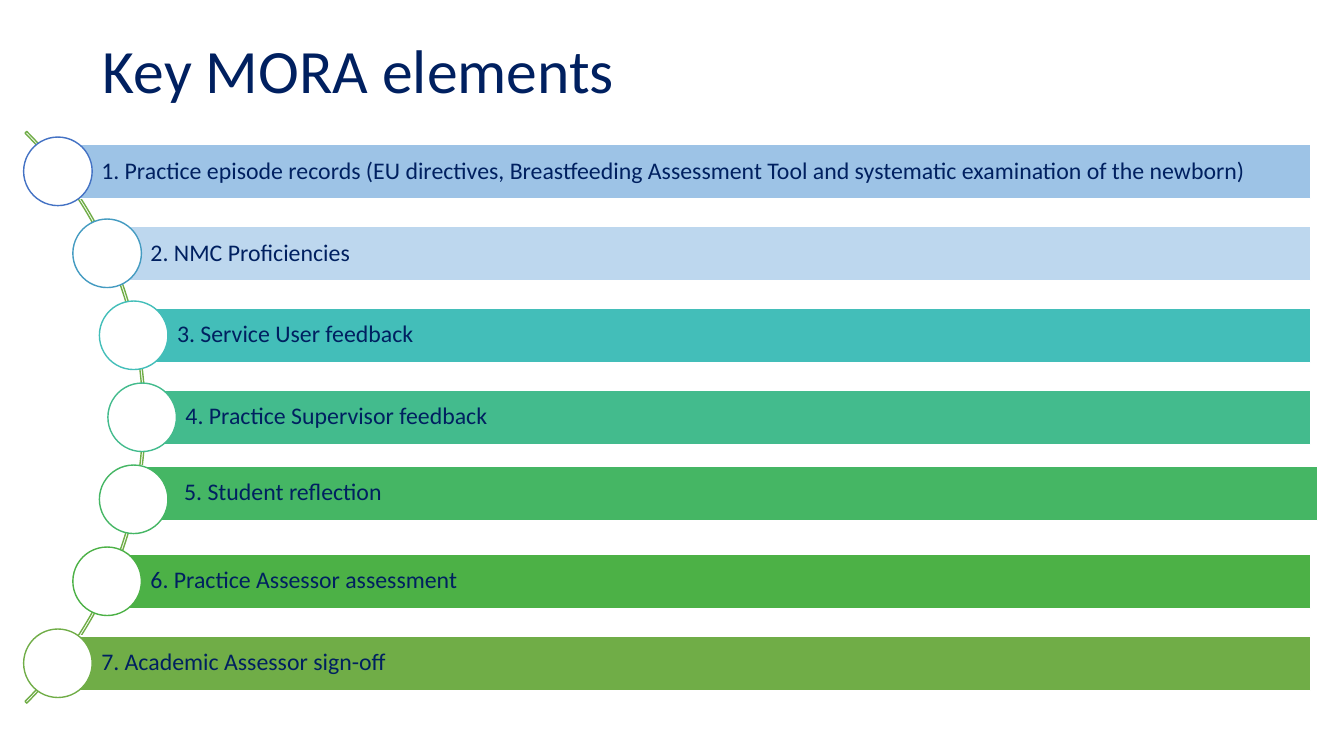
import math

import pptx
import pptx.dml.color
import pptx.enum.shapes
import pptx.enum.text
import pptx.util

Inches = pptx.util.Inches
Shape = pptx.enum.shapes.MSO_SHAPE
COLORS = {"ink": "002060", "white": "FFFFFF", "arc": "70AD47"}
ROWS = [
    ("1. Practice episode records (EU directives, Breastfeeding Assessment Tool "
     "and systematic examination of the newborn)", "9DC3E6", "4472C4"),
    ("2. NMC Proficiencies", "BDD7EE", "449BC1"),
    ("3. Service User feedback", "43BEB9", "43BEB9"),
    ("4. Practice Supervisor feedback", "43BB8D", "43BB8D"),
    ("5. Student reflection", "45B664", "45B664"),
    ("6. Practice Assessor assessment", "4CB146", "4CB146"),
    ("7. Academic Assessor sign-off", "70AD47", "70AD47"),
]
NUDGES = {4: (0.07, -0.06)}


def rgb(code):
    """Turn a hex string into a colour."""
    return pptx.dml.color.RGBColor.from_string(code)


def write(shape, text, size, color=COLORS["ink"], font="Calibri", inset=0.1):
    """Put one formatted line of text in a shape."""
    frame = shape.text_frame
    frame.word_wrap = True
    frame.auto_size = pptx.enum.text.MSO_AUTO_SIZE.NONE
    frame.vertical_anchor = pptx.enum.text.MSO_ANCHOR.MIDDLE
    frame.margin_left = Inches(inset)
    frame.margin_right = frame.margin_top = frame.margin_bottom = Inches(0.05)
    para = frame.paragraphs[0]
    para.alignment = pptx.enum.text.PP_ALIGN.LEFT
    para.line_spacing = 0.9
    run = para.add_run()
    run.text = text
    run.font.size = pptx.util.Pt(size)
    run.font.name = font
    run.font.color.rgb = rgb(color)


def draw(shapes, kind, box, fill, line):
    """Add a flat preset shape with a thin outline."""
    shape = shapes.add_shape(kind, *map(Inches, box))
    shape.shadow.inherit = False
    if fill:
        shape.fill.solid()
        shape.fill.fore_color.rgb = rgb(fill)
    else:
        shape.fill.background()
    shape.line.color.rgb = rgb(line)
    shape.line.width = pptx.util.Pt(1)
    return shape


def head(slide, box):
    """Place the slide title."""
    title = slide.shapes.title
    title.left, title.top, title.width, title.height = map(Inches, box)
    write(title, "Key MORA elements", 44)


def curve(slide, box):
    """Place the bars and their circles along an arc in the box."""
    left, top, width, height = box
    shapes = slide.shapes.add_group_shape().shapes
    side, radius, dot, bar = 8.02, 3.98, 0.68, 0.54
    mid_x, mid_y = left - 2.8, top + height / 2
    ring = (mid_x - side / 2, mid_y - side / 2, side, side)
    arc = draw(shapes, Shape.BLOCK_ARC, ring, None, COLORS["arc"])
    for spot, value in enumerate((189, 27, 0.003)):
        arc.adjustments[spot] = value

    step = (height - dot) / (len(ROWS) - 1)
    for row, (text, fill, line) in enumerate(ROWS):
        y = top + dot / 2 + row * step
        x = mid_x + math.sqrt(radius ** 2 - (y - mid_y) ** 2)
        dx, dy = NUDGES.get(row, (0, 0))
        place = (x + dx, y - bar / 2 + dy, left + width - x, bar)
        strip = draw(shapes, Shape.RECTANGLE, place, fill, COLORS["white"])
        write(strip, text, 17, inset=0.43)
        spot = (x - dot / 2, y - dot / 2, dot, dot)
        draw(shapes, Shape.OVAL, spot, COLORS["white"], line)


def main():
    """Build and save the slide."""
    deck = pptx.Presentation()
    deck.slide_width, deck.slide_height = Inches(13.33), Inches(7.5)
    slide = deck.slides.add_slide(deck.slide_layouts[5])
    head(slide, (0.92, 0, 11.5, 1.45))
    curve(slide, (0.23, 1.36, 12.77, 5.56))
    deck.save("out.pptx")


if __name__ == "__main__":
    main()
